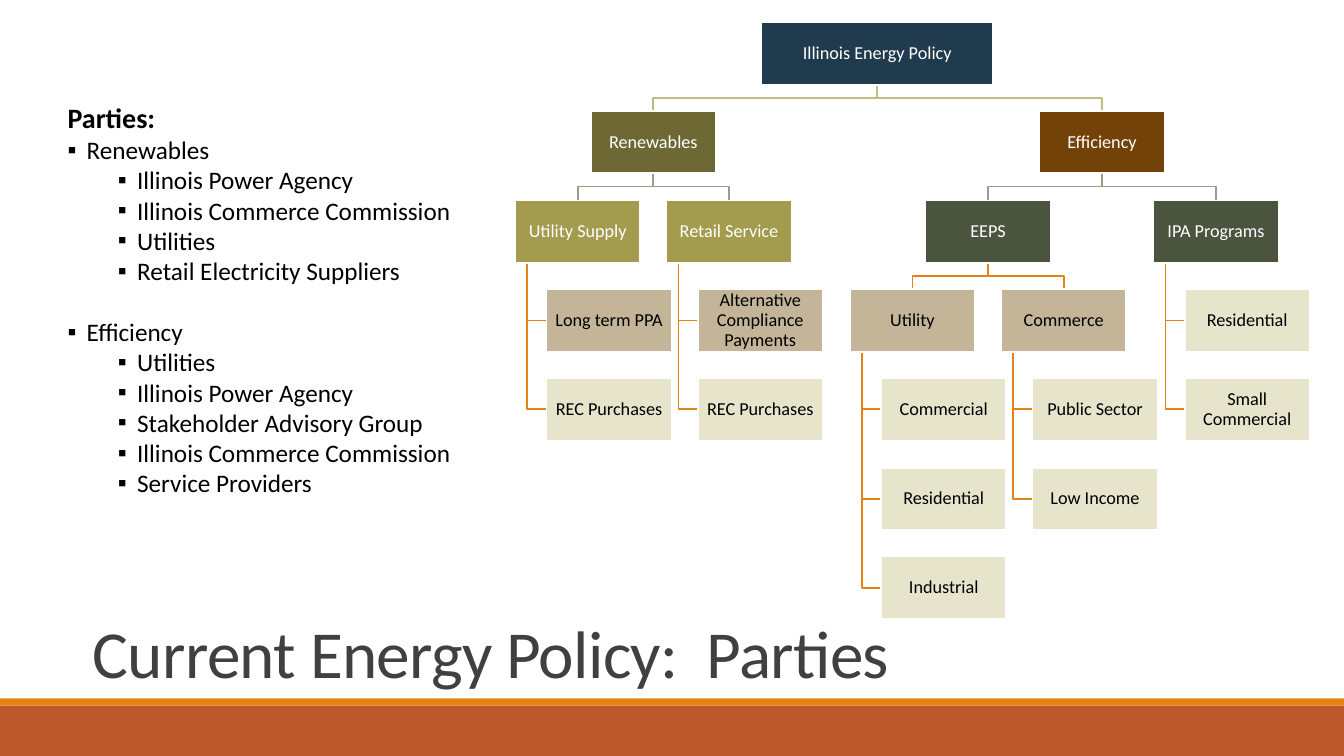
from dataclasses import dataclass

from lxml.etree import SubElement
from pptx import Presentation
from pptx.dml.color import RGBColor as RGB
from pptx.enum.shapes import MSO_SHAPE as SHAPE
from pptx.enum.text import MSO_ANCHOR as ANCHOR, MSO_AUTO_SIZE as AUTO, PP_ALIGN as ALIGN
from pptx.oxml.ns import qn
from pptx.util import Pt

PX = 9144
BOX_W, BOX_H, ROOT_W = 124, 62, 230
TOP, ROW_PITCH = 22, 88.3
HANG, TRUNK = 31, 12


@dataclass(frozen=True)
class Theme:
    font: str = "Calibri"
    title_size: int = 48
    heading_size: int = 20
    list_size: int = 18
    box_size: int = 13
    line_width: float = 1.25
    title: str = "404040"
    dark: str = "000000"
    light: str = "FFFFFF"
    band: str = "BD582C"
    accent: str = "E48312"
    navy: str = "203A4E"
    olive: str = "6D6834"
    moss: str = "A39B4E"
    brown: str = "724209"
    forest: str = "4A543E"
    tan: str = "C5B598"
    cream: str = "E7E4CC"
    links: tuple = ("C2BC80", "94A088", "E48312", "E48312")


T = Theme()


@dataclass
class Node:
    name: str
    fill: str
    kids: tuple = ()
    column: int = 0
    width: int = BOX_W

    def x(self):
        if self.column:
            return self.column
        return (self.kids[0].mid() + self.kids[-1].mid() - self.width) // 2

    def mid(self):
        return self.x() + self.width // 2


def hanging(name, fill, column, *leaves):
    kids = tuple(Node(leaf, color, column=column + HANG) for leaf, color in leaves)
    return Node(name, fill, kids, column)


POLICY = Node("Illinois Energy Policy", T.navy, (
    Node("Renewables", T.olive, (
        hanging("Utility Supply", T.moss, 511,
                ("Long term PPA", T.tan), ("REC Purchases", T.cream)),
        hanging("Retail Service", T.moss, 661,
                ("Alternative Compliance Payments", T.tan), ("REC Purchases", T.cream)),
    )),
    Node("Efficiency", T.brown, (
        Node("EEPS", T.forest, (
            hanging("Utility", T.tan, 843, ("Commercial", T.cream),
                    ("Residential", T.cream), ("Industrial", T.cream)),
            hanging("Commerce", T.tan, 993,
                    ("Public Sector", T.cream), ("Low Income", T.cream)),
        )),
        hanging("IPA Programs", T.forest, 1144,
                ("Residential", T.cream), ("Small Commercial", T.cream)),
    )),
), width=ROOT_W)

PARTIES = {
    "Renewables": ("Illinois Power Agency", "Illinois Commerce Commission",
                   "Utilities", "Retail Electricity Suppliers"),
    "Efficiency": ("Utilities", "Illinois Power Agency", "Stakeholder Advisory Group",
                   "Illinois Commerce Commission", "Service Providers"),
}


def apply(target, **values):
    for name, value in values.items():
        setattr(target, name, value)


def row_y(row):
    return round(TOP + ROW_PITCH * row)


def place(sp, x, y, w, h):
    apply(sp, left=x * PX, top=y * PX, width=w * PX, height=h * PX)


def write(p, text, size, color, bold=False):
    r = p.add_run()
    r.text = text
    apply(r.font, name=T.font, size=Pt(size), bold=bold)
    r.font.color.rgb = RGB.from_string(color)
    return r


def add_rect(s, x, y, w, h, fill):
    sp = s.shapes.add_shape(SHAPE.RECTANGLE, x * PX, y * PX, w * PX, h * PX)
    sp.shadow.inherit = False
    sp.fill.solid()
    sp.fill.fore_color.rgb = RGB.from_string(fill)
    sp.line.fill.background()
    return sp


def add_box(s, node, row):
    sp = add_rect(s, node.x(), row_y(row), node.width, BOX_H, node.fill)
    sp.line.color.rgb = RGB.from_string(T.light)
    sp.line.width = Pt(T.line_width)
    tf = sp.text_frame
    apply(tf, word_wrap=True, vertical_anchor=ANCHOR.MIDDLE, margin_left=PX,
          margin_right=PX, margin_top=PX, margin_bottom=PX)
    p = tf.paragraphs[0]
    apply(p, alignment=ALIGN.CENTER, line_spacing=0.9)
    write(p, node.name, T.box_size, T.dark if node.fill in (T.tan, T.cream) else T.light)


def add_link(s, points, color):
    path = s.shapes.build_freeform(*points[0], scale=PX)
    path.add_line_segments(points[1:], close=False)
    sp = path.convert_to_shape()
    sp.shadow.inherit = False
    sp.fill.background()
    sp.line.color.rgb = RGB.from_string(color)
    sp.line.width = Pt(T.line_width)


def draw_links(s, node, row=0):
    bottom = row_y(row) + BOX_H
    for i, kid in enumerate(node.kids):
        if node.column:
            trunk = node.x() + TRUNK
            y = row_y(row + 1 + i) + BOX_H // 2
            points = [(trunk, bottom), (trunk, y), (kid.x(), y)]
        else:
            top = row_y(row + 1)
            bend = (bottom + top) // 2
            points = [(node.mid(), bottom), (node.mid(), bend), (kid.mid(), bend), (kid.mid(), top)]
        add_link(s, points, T.links[row])
        draw_links(s, kid, row + 1)


def draw_boxes(s, node, row=0):
    add_box(s, node, row)
    for i, kid in enumerate(node.kids):
        draw_boxes(s, kid, row + 1 + (i if node.column else 0))


def set_bullet(p, margin, hang, char=None):
    pPr = p._p.get_or_add_pPr()
    pPr.set("marL", str(margin * PX))
    pPr.set("indent", str(-hang * PX))
    if char:
        SubElement(pPr, qn("a:buFont"), typeface="Arial")
        SubElement(pPr, qn("a:buChar"), char=char)
    else:
        SubElement(pPr, qn("a:buNone"))


def add_item(tf, text, level, before=0):
    p = tf.add_paragraph()
    apply(p, level=level, space_before=Pt(before), alignment=ALIGN.LEFT)
    set_bullet(p, 69 if level else 19, 19, "▪")
    write(p, text, T.list_size, T.dark)


def fill_title(sp, text):
    place(sp, 82, 614, 1100, 80)
    tf = sp.text_frame
    apply(tf, word_wrap=True, auto_size=AUTO.NONE, vertical_anchor=ANCHOR.TOP)
    p = tf.paragraphs[0]
    apply(p, alignment=ALIGN.LEFT, line_spacing=0.85)
    r = write(p, text, T.title_size, T.title)
    r.font._element.set("spc", "-50")


def fill_parties(sp):
    place(sp, 57, 95, 432, 407)
    tf = sp.text_frame
    apply(tf, word_wrap=True, auto_size=AUTO.NONE, vertical_anchor=ANCHOR.TOP)
    p = tf.paragraphs[0]
    p.space_before = Pt(0)
    set_bullet(p, 0, 0)
    write(p, "Parties:", T.heading_size, T.dark, bold=True)
    for i, (group, members) in enumerate(PARTIES.items()):
        add_item(tf, group, 0, before=22 * i)
        for member in members:
            add_item(tf, member, 1)


def main():
    prs = Presentation()
    apply(prs, slide_width=1333 * PX, slide_height=750 * PX)
    s = prs.slides.add_slide(prs.slide_layouts[1])
    add_rect(s, 0, 700, 1333, 50, T.band)
    add_rect(s, 0, 693, 1333, 7, T.accent)
    draw_links(s, POLICY)
    draw_boxes(s, POLICY)
    fill_title(s.shapes.title, "Current Energy Policy:  Parties")
    fill_parties(s.placeholders[1])
    prs.save("out.pptx")


if __name__ == "__main__":
    main()
